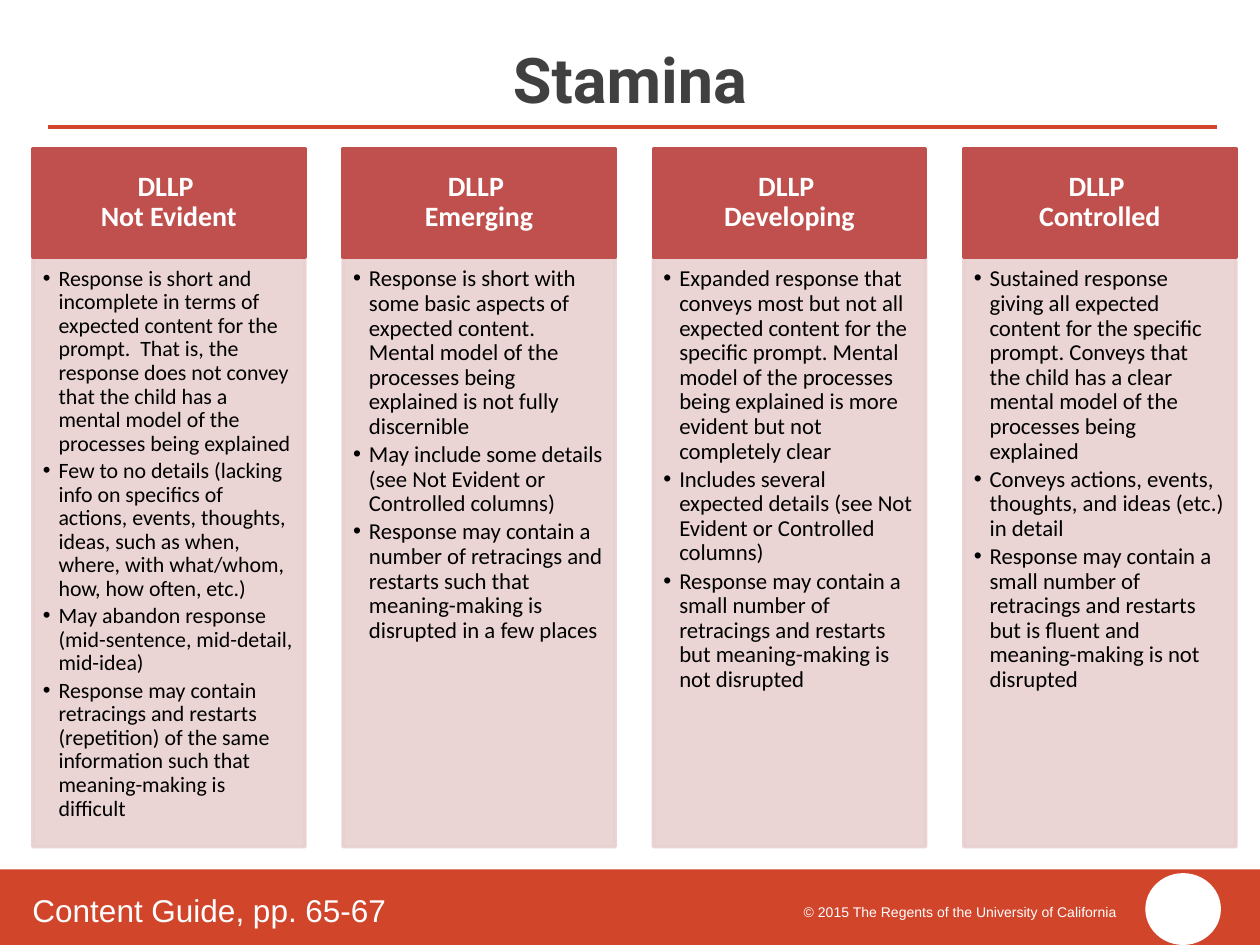
from dataclasses import dataclass

from lxml import etree
from pptx import Presentation
from pptx import util as u
from pptx.dml.color import RGBColor
from pptx.enum import shapes, text
from pptx.oxml.ns import qn


@dataclass(frozen=True)
class Theme:
    accent: str = "D1452B"
    header: str = "C0504D"
    panel: str = "E8D0D0"
    white: str = "FFFFFF"
    black: str = "000000"
    title: str = "404040"
    title_size: float = 36
    footer_size: float = 18
    header_size: float = 16
    list_size: float = 13
    dense_size: float = 12.5
    credit_size: float = 8
    panel_opacity: int = 90


T = Theme()
LEFT, STEP, WIDTH = 0.26, 2.463, 2.16
HEADER_TOP, HEADER_HEIGHT = 1.18, 0.86
LIST_TOP, LIST_HEIGHT = 2.04, 4.68

COLUMNS = [
    ("Not Evident", T.dense_size, [
        "Response is short and incomplete in terms of expected content for the prompt. "
        " That is, the response does not convey that the child has a mental model of the "
        "processes being explained",
        "Few to no details (lacking info on specifics of actions, events, thoughts, ideas, "
        "such as when, where, with what/whom, how, how often, etc.)",
        "May abandon response (mid-sentence, mid-detail, mid-idea)",
        "Response may contain retracings and restarts (repetition) of the same information "
        "such that meaning-making is difficult",
    ]),
    ("Emerging", T.list_size, [
        "Response is short with some basic aspects of expected content. Mental model of the "
        "processes being explained is not fully discernible",
        "May include some details (see Not Evident or Controlled columns)",
        "Response may contain a number of retracings and restarts such that meaning-making "
        "is disrupted in a few places",
    ]),
    ("Developing", T.list_size, [
        "Expanded response that conveys most but not all expected content for the specific "
        "prompt. Mental model of the processes being explained is more evident but not "
        "completely clear",
        "Includes several expected details (see Not Evident or Controlled columns)",
        "Response may contain a small number of retracings and restarts but meaning-making "
        "is not disrupted",
    ]),
    ("Controlled", T.list_size, [
        "Sustained response giving all expected content for the specific prompt. Conveys "
        "that the child has a clear mental model of the processes being explained",
        "Conveys actions, events, thoughts, and ideas (etc.) in detail",
        "Response may contain a small number of retracings and restarts but is fluent and "
        "meaning-making is not disrupted",
    ]),
]


def apply(obj, **values):
    for name, value in values.items():
        setattr(obj, name, value)


def place(sp, *box):
    apply(sp, **dict(zip(("left", "top", "width", "height"), map(u.Inches, box))))


def format_frame(tf, anchor, insets=(0.1, 0.05, 0.1, 0.05)):
    sides = ("margin_left", "margin_top", "margin_right", "margin_bottom")
    apply(tf, word_wrap=True, auto_size=text.MSO_AUTO_SIZE.NONE, vertical_anchor=anchor,
          **dict(zip(sides, map(u.Inches, insets))))


def write(p, content, size, font, color, bold=False, **layout):
    p.text = content
    apply(p, **{"space_before": u.Pt(0), **layout})
    for r in p.runs:
        apply(r.font, size=u.Pt(size), name=font, bold=bold)
        r.font.color.rgb = RGBColor.from_string(color)


def paint(sp, color, line_width=None, opacity=None):
    fills = [sp.fill]
    if line_width:
        sp.line.width = u.Pt(line_width)
        fills.append(sp.line.fill)
    else:
        sp.line.fill.background()
    for fill in fills:
        fill.solid()
        fill.fore_color.rgb = RGBColor.from_string(color)
    if opacity:
        for clr in sp._element.spPr.iter(qn("a:srgbClr")):
            etree.SubElement(clr, qn("a:alpha"), val=str(opacity * 1000))


def add_block(s, kind, box, color, line_width=None):
    sp = s.shapes.add_shape(kind, *map(u.Inches, box))
    sp.shadow.inherit = False
    paint(sp, color, line_width)
    return sp


def add_rule(s, x1, x2, y):
    line = s.shapes.add_connector(shapes.MSO_CONNECTOR.STRAIGHT,
                                  *map(u.Inches, (x1, y, x2, y)))
    line.line.width = u.Pt(2)
    line.line.color.rgb = RGBColor.from_string(T.accent)
    etree.SubElement(line._element.spPr, qn("a:effectLst"))


def add_label(s, box, content, size):
    sp = s.shapes.add_textbox(*map(u.Inches, box))
    format_frame(sp.text_frame, text.MSO_ANCHOR.TOP)
    write(sp.text_frame.paragraphs[0], content, size, "Arial", T.white)


def set_title(s, content):
    sp = s.shapes.title
    place(sp, 0.47, 0.23, 9.06, 0.79)
    format_frame(sp.text_frame, text.MSO_ANCHOR.MIDDLE)
    write(sp.text_frame.paragraphs[0], content, T.title_size, "Roboto", T.title, True,
          alignment=text.PP_ALIGN.CENTER)


def add_header(s, left, level):
    sp = add_block(s, shapes.MSO_SHAPE.RECTANGLE,
                   (left, HEADER_TOP, WIDTH, HEADER_HEIGHT), T.header, 2)
    format_frame(sp.text_frame, text.MSO_ANCHOR.MIDDLE, (0.12, 0.07, 0.12, 0.07))
    write(sp.text_frame.paragraphs[0], f"DLLP \n{level}", T.header_size, "Calibri", T.white,
          True, alignment=text.PP_ALIGN.CENTER, line_spacing=0.9)


def fill_list(sp, left, items, size):
    place(sp, left, LIST_TOP, WIDTH, LIST_HEIGHT)
    paint(sp, T.panel, 2, T.panel_opacity)
    tf = sp.text_frame
    format_frame(tf, text.MSO_ANCHOR.TOP, (0.08, 0.08, 0.1, 0.11))
    for i, item in enumerate(items):
        p = tf.add_paragraph() if i else tf.paragraphs[0]
        pPr = p._p.get_or_add_pPr()
        indent = u.Inches(0.125)
        apply_indent = {"marL": indent, "indent": -indent}
        for name, value in apply_indent.items():
            pPr.set(name, str(value))
        etree.SubElement(pPr, qn("a:buChar"), char="•")
        write(p, item, size, "Calibri", T.black, line_spacing=0.9, space_after=u.Pt(2),
              alignment=text.PP_ALIGN.LEFT)


def add_footer(s):
    add_block(s, shapes.MSO_SHAPE.RECTANGLE, (0, 6.9, 10, 0.6), T.accent)
    add_block(s, shapes.MSO_SHAPE.OVAL, (9.09, 6.93, 0.6, 0.57), T.white)
    add_label(s, (6.28, 7.12, 2.75, 0.24),
              "© 2015 The Regents of the University of California", T.credit_size)
    add_label(s, (0.16, 7.02, 5.5, 0.4), "Content Guide, pp. 65-67", T.footer_size)


def main():
    prs = Presentation()
    apply(prs, slide_width=u.Inches(10), slide_height=u.Inches(7.5))
    s = prs.slides.add_slide(prs.slide_layouts.get_by_name("Comparison"))
    set_title(s, "Stamina")
    add_rule(s, 0.38, 9.66, 1.01)
    bodies = [sp for sp in s.placeholders if sp.placeholder_format.idx]
    for i, (body, (level, size, items)) in enumerate(zip(bodies, COLUMNS)):
        left = LEFT + i * STEP
        add_header(s, left, level)
        fill_list(body, left, items, size)
    add_footer(s)
    prs.save("out.pptx")


if __name__ == "__main__":
    main()
